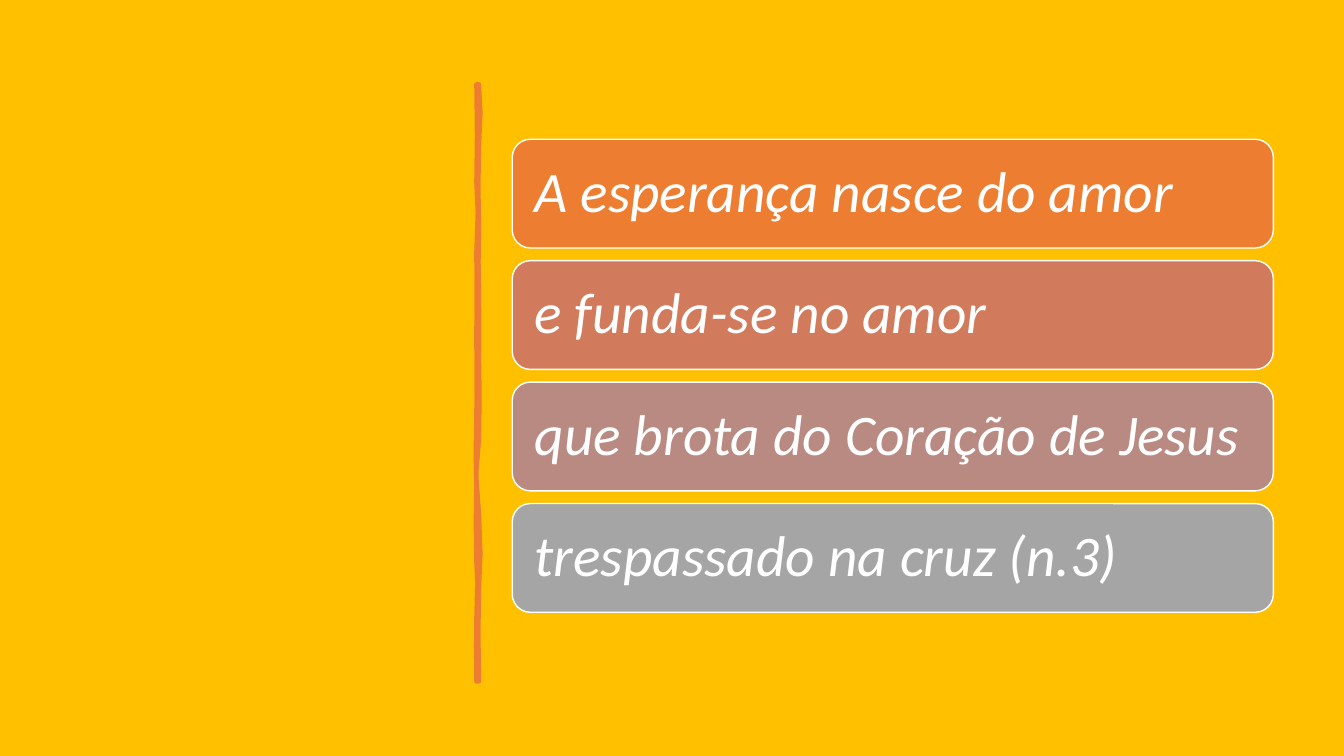
from pptx import Presentation
from pptx.dml.color import RGBColor
from pptx.enum.shapes import MSO_SHAPE
from pptx.enum.text import MSO_ANCHOR, PP_ALIGN
from pptx.util import Cm, Pt

ROUNDED = MSO_SHAPE.ROUNDED_RECTANGLE
MIDDLE = MSO_ANCHOR.MIDDLE
LEFT = PP_ALIGN.LEFT
BLANK = 6

GOLD, ORANGE, WHITE = "FFC000", "ED7D31", "FFFFFF"
LINES = [
    ("A esperança nasce do amor", ORANGE),
    ("e funda-se no amor", "D17B5C"),
    ("que brota do Coração de Jesus", "B98A82"),
    ("trespassado na cruz (n.3)", "A5A5A5"),
]

# Brush stroke in cm: each edge is a start point, then three points per curve.
RIGHT_EDGE = [
    (12.07, 2.13),
    (12.12, 2.59), (12.12, 3.02), (12.07, 3.71),
    (12.01, 4.39), (12.09, 4.95), (12.07, 5.74),
    (12.04, 6.53), (12.07, 6.65), (12.07, 7.47),
    (12.04, 8.26), (12.12, 8.69), (12.07, 9.04),
    (12.01, 9.4), (12.17, 10.52), (12.07, 11.07),
    (11.96, 11.61), (11.99, 12.29), (12.07, 12.95),
    (12.12, 13.61), (12.12, 14.33), (12.07, 14.83),
    (12.01, 15.32), (12.09, 16.51), (12.07, 17.17),
]
LEFT_EDGE = [
    (12.01, 17.17),
    (12.04, 16.41), (11.96, 16.36), (12.01, 15.57),
    (12.04, 14.81), (12.04, 14.48), (12.01, 14.15),
    (11.99, 13.82), (11.99, 12.57), (12.01, 12.12),
    (12.01, 11.66), (11.96, 11.3), (12.01, 10.54),
    (12.04, 9.8), (11.99, 9.47), (12.01, 8.51),
    (12.04, 7.57), (11.99, 7.14), (12.01, 6.35),
    (12.04, 5.54), (12.07, 5.08), (12.01, 4.6),
    (11.94, 4.14), (12.12, 2.64), (12.01, 2.13),
]


def color(code):
    return RGBColor.from_string(code)


def paint(shape, fill, line, width):
    shape.shadow.inherit = False
    shape.fill.solid()
    shape.fill.fore_color.rgb = color(fill)
    shape.line.color.rgb = color(line)
    shape.line.width = Pt(width)


def trace(edge, steps=2):
    """Return points along the cubic curves of an edge."""
    points = [edge[0]]
    for i in range(0, len(edge) - 1, 3):
        a, b, c, d = edge[i:i + 4]
        for n in range(1, steps + 1):
            t = n / steps
            u = 1 - t
            points.append(tuple(
                u**3 * a[k] + 3 * u * u * t * b[k] + 3 * u * t * t * c[k] + t**3 * d[k]
                for k in (0, 1)))
    return points


def add_brush(slide):
    points = [(Cm(x), Cm(y)) for x, y in trace(RIGHT_EDGE) + trace(LEFT_EDGE)]
    pen = slide.shapes.build_freeform(*points[0])
    pen.add_line_segments(points[1:], close=True)
    paint(pen.convert_to_shape(), ORANGE, ORANGE, 3.25)


def add_box(slide, top, text, fill):
    box = slide.shapes.add_shape(ROUNDED, Cm(12.91), top, Cm(19.18), Cm(2.74))
    paint(box, fill, WHITE, 1)
    frame = box.text_frame
    frame.text = text
    frame.word_wrap = True
    frame.vertical_anchor = MIDDLE
    frame.margin_left = frame.margin_right = Cm(0.43)
    para = frame.paragraphs[0]
    para.alignment = LEFT
    para.line_spacing = 0.9
    font = para.runs[0].font
    font.name = "Calibri"
    font.size = Pt(41)
    font.italic = True
    font.color.rgb = color(WHITE)


def main():
    deck = Presentation()
    deck.slide_width, deck.slide_height = Cm(33.87), Cm(19.05)
    slide = deck.slides.add_slide(deck.slide_layouts[BLANK])
    slide.background.fill.solid()
    slide.background.fill.fore_color.rgb = color(GOLD)
    add_brush(slide)
    for row, (text, fill) in enumerate(LINES):
        add_box(slide, Cm(3.51 + 3.06 * row), text, fill)
    deck.save("out.pptx")


if __name__ == "__main__":
    main()
